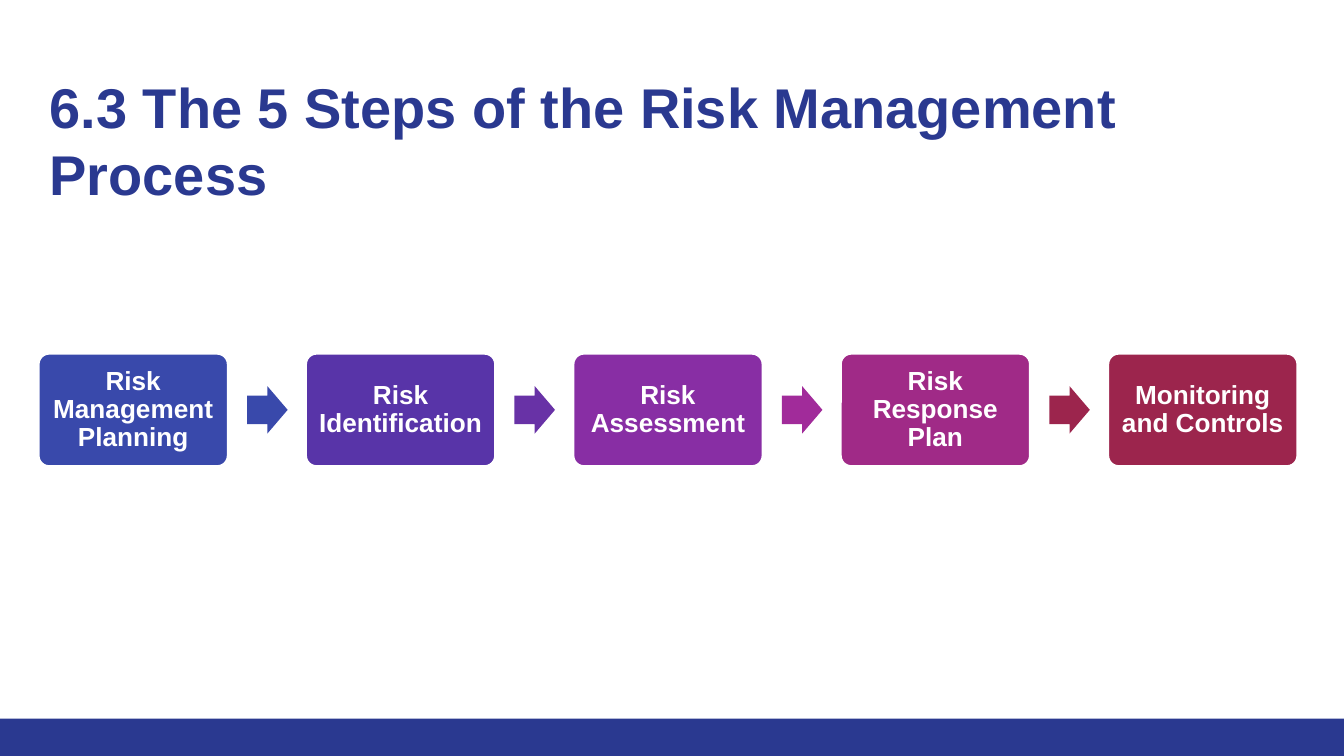
from pptx import Presentation
from pptx.dml.color import RGBColor
from pptx.enum.shapes import MSO_SHAPE
from pptx.enum.text import MSO_ANCHOR, MSO_AUTO_SIZE, PP_ALIGN
from pptx.util import Pt

# Content: step text, box colour, colour of the arrow that follows
TITLE = "6.3 The 5 Steps of the Risk Management Process"
STEPS = [
    ("Risk Management Planning", "3949AB", "3949AB"),
    ("Risk Identification", "5834A8", "6832A6"),
    ("Risk Assessment", "882EA4", "A12B9A"),
    ("Risk Response Plan", "A02A87", "9C254D"),
    ("Monitoring and Controls", "9C254D", None),
]
NAVY, WHITE = "2A3990", "FFFFFF"

# Layout in points
PAGE_WIDTH, PAGE_HEIGHT = 720, 405
BAR_HEIGHT = 20
ROW_LEFT, ROW_TOP, STEP_PITCH = 20.2, 189, 143.25
BOX_WIDTH, BOX_HEIGHT = 102.3, 61.2
ARROW_OFFSET, ARROW_WIDTH, ARROW_HEIGHT = 112.2, 21.7, 25.4


def color(hex_text):
    return RGBColor.from_string(hex_text)


def add_filled(kind, left, top, width, height, fill):
    shape = page.shapes.add_shape(kind, Pt(left), Pt(top), Pt(width), Pt(height))
    shape.shadow.inherit = False
    shape.fill.solid()
    shape.fill.fore_color.rgb = color(fill)
    shape.line.fill.background()
    return shape


def write(shape, text, size, ink, align, anchor, inset):
    frame = shape.text_frame
    frame.word_wrap = True
    frame.auto_size = MSO_AUTO_SIZE.NONE
    frame.vertical_anchor = anchor
    frame.margin_left = frame.margin_right = Pt(inset)
    frame.margin_top = frame.margin_bottom = Pt(inset)
    paragraph = frame.paragraphs[0]
    paragraph.text = text
    paragraph.alignment = align
    paragraph.font.name = "Arial"
    paragraph.font.size = Pt(size)
    paragraph.font.bold = True
    paragraph.font.color.rgb = color(ink)
    return paragraph


deck = Presentation()
deck.slide_width, deck.slide_height = Pt(PAGE_WIDTH), Pt(PAGE_HEIGHT)
page = deck.slides.add_slide(deck.slide_layouts[5])

# Bottom bar
add_filled(MSO_SHAPE.RECTANGLE, 0, PAGE_HEIGHT - BAR_HEIGHT, PAGE_WIDTH, BAR_HEIGHT, NAVY)

# Title
title = page.shapes.title
title.left, title.top, title.width, title.height = Pt(19.4), Pt(31.7), Pt(676), Pt(48.2)
write(title, TITLE, 30, NAVY, PP_ALIGN.LEFT, MSO_ANCHOR.TOP, 7.2)

# Row of steps joined by arrows
for index, (text, box_fill, arrow_fill) in enumerate(STEPS):
    left = ROW_LEFT + index * STEP_PITCH
    box = add_filled(MSO_SHAPE.ROUNDED_RECTANGLE, left, ROW_TOP, BOX_WIDTH, BOX_HEIGHT, box_fill)
    box.adjustments[0] = 0.1
    box.line.color.rgb = color(WHITE)
    box.line.width = Pt(2)
    label = write(box, text, 14, WHITE, PP_ALIGN.CENTER, MSO_ANCHOR.MIDDLE, 4.2)
    label.line_spacing = 0.9
    if arrow_fill:
        arrow_top = ROW_TOP + (BOX_HEIGHT - ARROW_HEIGHT) / 2
        arrow = add_filled(MSO_SHAPE.RIGHT_ARROW, left + ARROW_OFFSET, arrow_top,
                           ARROW_WIDTH, ARROW_HEIGHT, arrow_fill)
        arrow.adjustments[0] = 0.6
        arrow.adjustments[1] = 0.5

deck.save("out.pptx")
